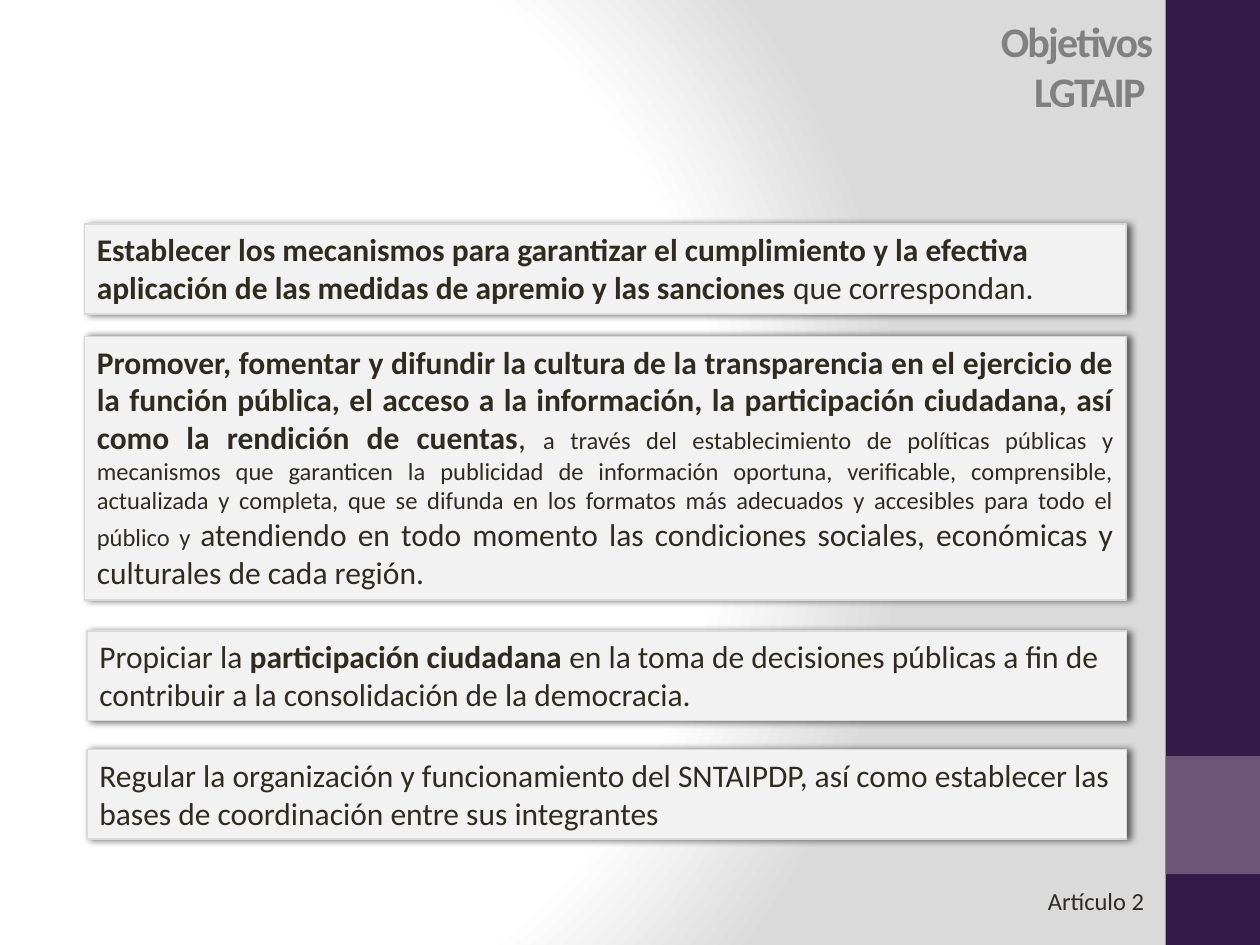
"""Build the slide on the objectives of the LGTAIP."""

from dataclasses import dataclass

from lxml import etree
from pptx import Presentation
from pptx.dml.color import RGBColor
from pptx.enum.shapes import MSO_SHAPE
from pptx.enum.text import MSO_ANCHOR, MSO_AUTO_SIZE, PP_ALIGN
from pptx.oxml import parse_xml
from pptx.oxml.ns import nsdecls
from pptx.util import Inches, Pt

RECTANGLE = MSO_SHAPE.RECTANGLE
LEFT, RIGHT, JUSTIFY = PP_ALIGN.LEFT, PP_ALIGN.RIGHT, PP_ALIGN.JUSTIFY
TOP, MIDDLE = MSO_ANCHOR.TOP, MSO_ANCHOR.MIDDLE
GROW, FIXED = MSO_AUTO_SIZE.SHAPE_TO_FIT_TEXT, MSO_AUTO_SIZE.NONE

WIDTH, HEIGHT = Inches(10), Inches(7.5)
COLORS = {
    "white": "FFFFFF",
    "backdrop": "DADADA",
    "band": "341A46",
    "accent": "6C5578",
    "title": "808080",
    "card": "F2F2F2",
    "border": "D9D9D9",
    "shadow": "000000",
    "text": "2F2B20",
}


@dataclass(frozen=True)
class Area:
    """Hold a place as percentages of the slide's width and height."""

    left: float
    top: float
    width: float
    height: float

    def lengths(self) -> tuple[int, int, int, int]:
        """Return left, top, width and height as slide lengths."""
        return (
            round(WIDTH * self.left / 100),
            round(HEIGHT * self.top / 100),
            round(WIDTH * self.width / 100),
            round(HEIGHT * self.height / 100),
        )


@dataclass(frozen=True)
class Span:
    """Hold a stretch of text in one format."""

    text: str
    bold: bool = False
    size: int = 18
    color: str = "text"
    spacing: int = 0


@dataclass(frozen=True)
class Block:
    """Hold a text block with its place and format."""

    area: Area
    spans: tuple[Span, ...]
    align: PP_ALIGN = LEFT
    anchor: MSO_ANCHOR = TOP
    resize: MSO_AUTO_SIZE = GROW


BANDS = {"band": Area(92.5, 0, 7.5, 100), "accent": Area(92.5, 80, 7.5, 12.5)}

TITLE = Block(
    Area(62.6, -0.4, 29.9, 14.67),
    (Span("Objetivos\vLGTAIP ", True, 24, "title", -100),),
    RIGHT, MIDDLE, FIXED,
)
CARDS = (
    Block(Area(6.7, 23.73, 82.7, 9.47), (
        Span("Establecer los mecanismos para garantizar el cumplimiento y la efectiva "
             "aplicación de las medidas de apremio y las sanciones", True),
        Span(" que correspondan."),
    )),
    Block(Area(6.7, 35.6, 82.7, 27.87), (
        Span("Promover, fomentar y difundir la cultura de la transparencia en el ejercicio "
             "de la función pública, el acceso a la información, la participación "
             "ciudadana, así como la rendición de cuentas", True),
        Span(", "),
        Span("a través del establecimiento de políticas públicas y mecanismos que "
             "garanticen la publicidad de información oportuna, verificable, "
             "comprensible, actualizada y completa, que se difunda en los formatos más "
             "adecuados y accesibles para todo el público y ", size=14),
        Span("atendiendo en todo momento las condiciones sociales, económicas y "
             "culturales de cada región."),
    ), JUSTIFY),
    Block(Area(6.9, 66.8, 82.5, 9.47), (
        Span("Propiciar la "),
        Span("participación ciudadana", True),
        Span(" en la toma de decisiones públicas a fin de contribuir a la consolidación "
             "de la democracia."),
    )),
    Block(Area(6.9, 79.33, 82.5, 9.47), (
        Span("Regular la organización y funcionamiento del SNTAIPDP, así como establecer "
             "las bases de coordinación entre sus integrantes"),
    )),
)
SOURCE = Block(Area(76.8, 93.07, 15, 4.53), (Span("Artículo 2", size=14),), RIGHT)


def color(name: str) -> RGBColor:
    """Return a named colour."""
    return RGBColor.from_string(COLORS[name])


def paint_background(page) -> None:
    """Fill the page with a circular gradient."""
    stops = "".join(
        f'<a:gs pos="{share * 1000}"><a:srgbClr val="{COLORS[name]}"/></a:gs>'
        for share, name in ((0, "white"), (75, "white"), (100, "backdrop"))
    )
    background = parse_xml(
        f'<p:bg {nsdecls("p", "a")}><p:bgPr><a:gradFill rotWithShape="1">'
        f'<a:gsLst>{stops}</a:gsLst><a:path path="circle">'
        '<a:fillToRect l="20000" t="50000" r="100000" b="50000"/></a:path>'
        "</a:gradFill><a:effectLst/></p:bgPr></p:bg>"
    )
    page._element.cSld.insert(0, background)


def draw_rectangle(page, area: Area, fill: str):
    """Draw a plain filled rectangle."""
    box = page.shapes.add_shape(RECTANGLE, *area.lengths())
    box.shadow.inherit = False
    box.fill.solid()
    box.fill.fore_color.rgb = color(fill)
    box.line.fill.background()
    return box


def add_shadow(box) -> None:
    """Give a box a soft shadow to its right."""
    old = box._element.spPr.find("{*}effectLst")
    shadow = parse_xml(
        f'<a:outerShdw {nsdecls("a")} blurRad="{Pt(4)}" dist="{Pt(2)}" dir="0" '
        f'rotWithShape="0"><a:srgbClr val="{COLORS["shadow"]}">'
        '<a:alpha val="60000"/></a:srgbClr></a:outerShdw>'
    )
    etree.SubElement(old, "holder")
    old.replace(old[0], shadow)


def write_text(box, block: Block) -> None:
    """Write a block's spans into a box."""
    frame = box.text_frame
    layout = {"word_wrap": True, "auto_size": block.resize, "vertical_anchor": block.anchor}
    for name, value in layout.items():
        setattr(frame, name, value)
    para = frame.paragraphs[0]
    para.alignment = block.align
    for span in block.spans:
        for index, line in enumerate(span.text.split("\v")):
            if index:
                para.add_line_break()
            run = para.add_run()
            run.text = line
            values = {"name": "Calibri", "size": Pt(span.size), "bold": span.bold}
            for name, value in values.items():
                setattr(run.font, name, value)
            run.font.color.rgb = color(span.color)
            if span.spacing:
                run._r.get_or_add_rPr().set("spc", str(span.spacing))


def draw_label(page, block: Block) -> None:
    """Draw a text block without a frame."""
    write_text(page.shapes.add_textbox(*block.area.lengths()), block)


def draw_card(page, block: Block) -> None:
    """Draw a framed text block with a shadow."""
    box = draw_rectangle(page, block.area, "card")
    box.line.color.rgb = color("border")
    box.line.width = Pt(1)
    add_shadow(box)
    write_text(box, block)


def main() -> None:
    """Build and save the deck."""
    deck = Presentation()
    deck.slide_width, deck.slide_height = WIDTH, HEIGHT
    page = deck.slides.add_slide(deck.slide_layouts[6])
    paint_background(page)
    for fill, area in BANDS.items():
        draw_rectangle(page, area, fill)
    draw_label(page, TITLE)
    for card in CARDS:
        draw_card(page, card)
    draw_label(page, SOURCE)
    deck.save("out.pptx")


if __name__ == "__main__":
    main()
